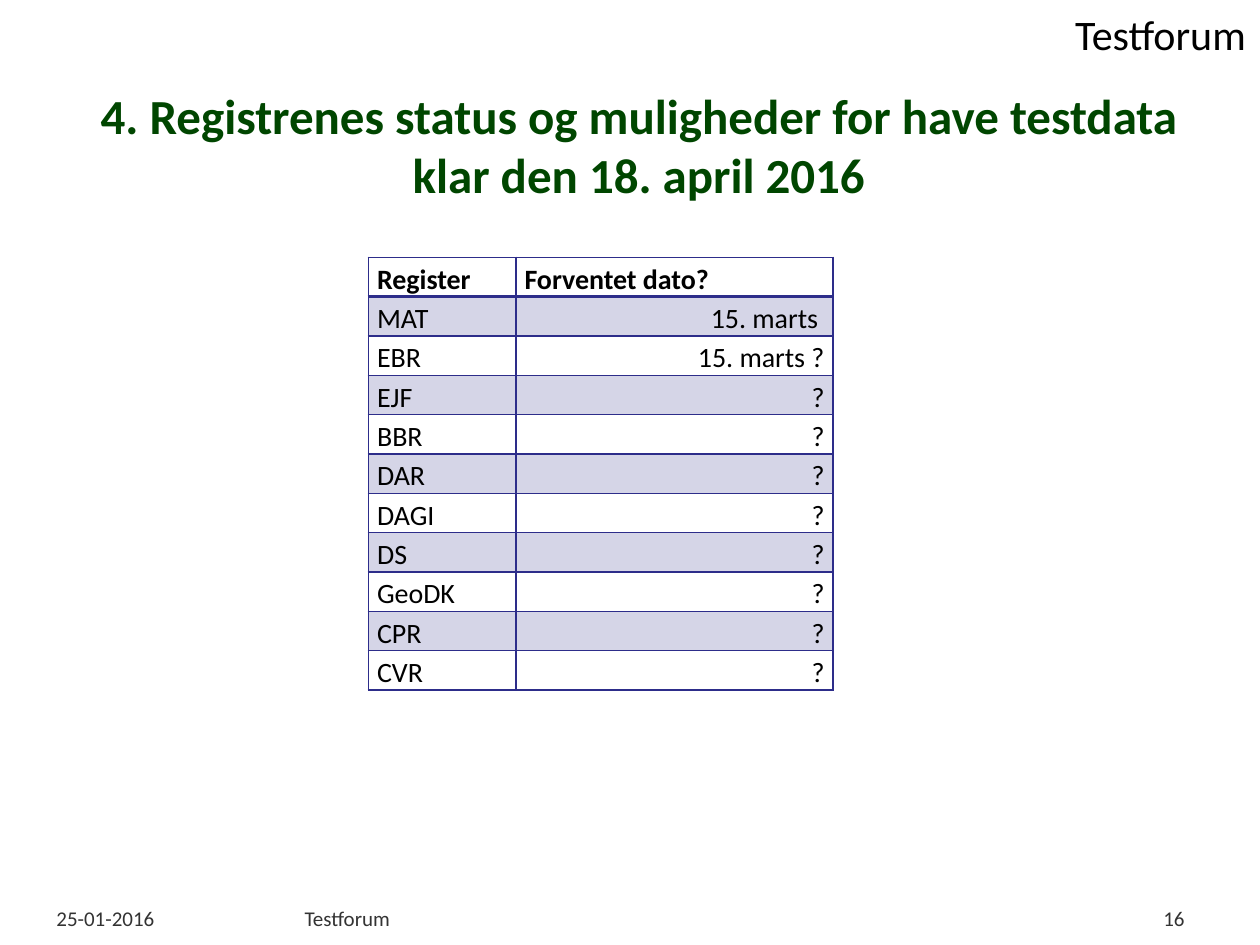
from lxml import etree
from pptx import Presentation
from pptx import util as u
from pptx.dml.color import RGBColor
from pptx.enum import text as t
from pptx.oxml import ns

COLORS = {"black": "000000", "title": "004600", "footer": "333333", "accent": "2D2D8A"}
FONT = "Calibri"
LEFT, CENTER, RIGHT = t.PP_ALIGN.LEFT, t.PP_ALIGN.CENTER, t.PP_ALIGN.RIGHT

ROWS = [("Register", "Forventet dato? "), ("MAT", "15. marts "), ("EBR", "15. marts ?")]
ROWS += [(name, "?") for name in ("EJF", "BBR", "DAR", "DAGI", "DS", "GeoDK", "CPR", "CVR")]
COLUMN_WIDTHS = (84.25, 181.4)
ROW_HEIGHT = 22.5


def write(frame, words, size=12, color="black", bold=False, align=LEFT, spacing=None):
    para = frame.paragraphs[0]
    para.alignment = align
    para.line_spacing = spacing
    span = para.add_run()
    span.text = words
    span.font.name = FONT
    span.font.size = u.Pt(size)
    span.font.bold = bold
    span.font.color.rgb = RGBColor.from_string(COLORS[color])


def add_text(page, words, left, top, width, height, wrap=True,
             anchor=t.MSO_ANCHOR.TOP, **style):
    box = page.shapes.add_textbox(u.Pt(left), u.Pt(top), u.Pt(width), u.Pt(height))
    box.text_frame.word_wrap = wrap
    box.text_frame.vertical_anchor = anchor
    write(box.text_frame, words, **style)


def add_child(parent, tag, **attributes):
    return etree.SubElement(parent, ns.qn(tag), attributes)


def set_border(cell, side, width):
    line = add_child(cell._tc.get_or_add_tcPr(), f"a:ln{side}", w=str(u.Pt(width)))
    add_child(add_child(line, "a:solidFill"), "a:srgbClr", val=COLORS["accent"])


def set_fill(cell, shaded):
    if not shaded:
        cell.fill.background()
        return
    cell.fill.solid()
    cell.fill.fore_color.rgb = RGBColor.from_string(COLORS["accent"])
    color = cell._tc.tcPr.find(ns.qn("a:solidFill"))[0]
    add_child(color, "a:alpha", val="20000")


def add_register_table(page, left, top):
    table = page.shapes.add_table(
        len(ROWS), len(COLUMN_WIDTHS), u.Pt(left), u.Pt(top),
        u.Pt(sum(COLUMN_WIDTHS)), u.Pt(ROW_HEIGHT * len(ROWS))).table
    for column, width in zip(table.columns, COLUMN_WIDTHS):
        column.width = u.Pt(width)
    for r, row in enumerate(ROWS):
        table.rows[r].height = u.Pt(ROW_HEIGHT)
        for c, words in enumerate(row):
            cell = table.cell(r, c)
            cell.margin_left = cell.margin_right = u.Pt(5)
            cell.margin_top = cell.margin_bottom = 0
            # The rule under the heading row is heavier
            widths = {"L": 1, "R": 1, "T": 2 if r == 1 else 1, "B": 2 if r == 0 else 1}
            for side, width in widths.items():
                set_border(cell, side, width)
            set_fill(cell, shaded=r % 2 == 1)
            write(cell.text_frame, words, size=16, bold=r == 0, spacing=1.15,
                  align=RIGHT if r and c else LEFT)


def main():
    deck = Presentation()
    deck.slide_width, deck.slide_height = u.Pt(720), u.Pt(540)
    page = deck.slides.add_slide(deck.slide_layouts[6])

    # Header and title
    add_text(page, "Testforum", 606.25, 1.5, 113.75, 36, wrap=False, size=24, align=CENTER)
    add_text(page, "4. Registrenes status og muligheder for have testdata klar den 18. april 2016",
             41, 60, 648, 45, anchor=t.MSO_ANCHOR.MIDDLE,
             size=28, color="title", bold=True, align=CENTER)

    # Expected date for each register
    add_register_table(page, 210.5, 147)

    # Footer
    for words, left, width, align in (("25-01-2016", 25.2, 170.6, LEFT),
                                      ("Testforum", 167, 448, LEFT),
                                      ("16", 632, 52, RIGHT)):
        add_text(page, words, left, 514, width, 11.5, color="footer", align=align)

    deck.save("out.pptx")


if __name__ == "__main__":
    main()
